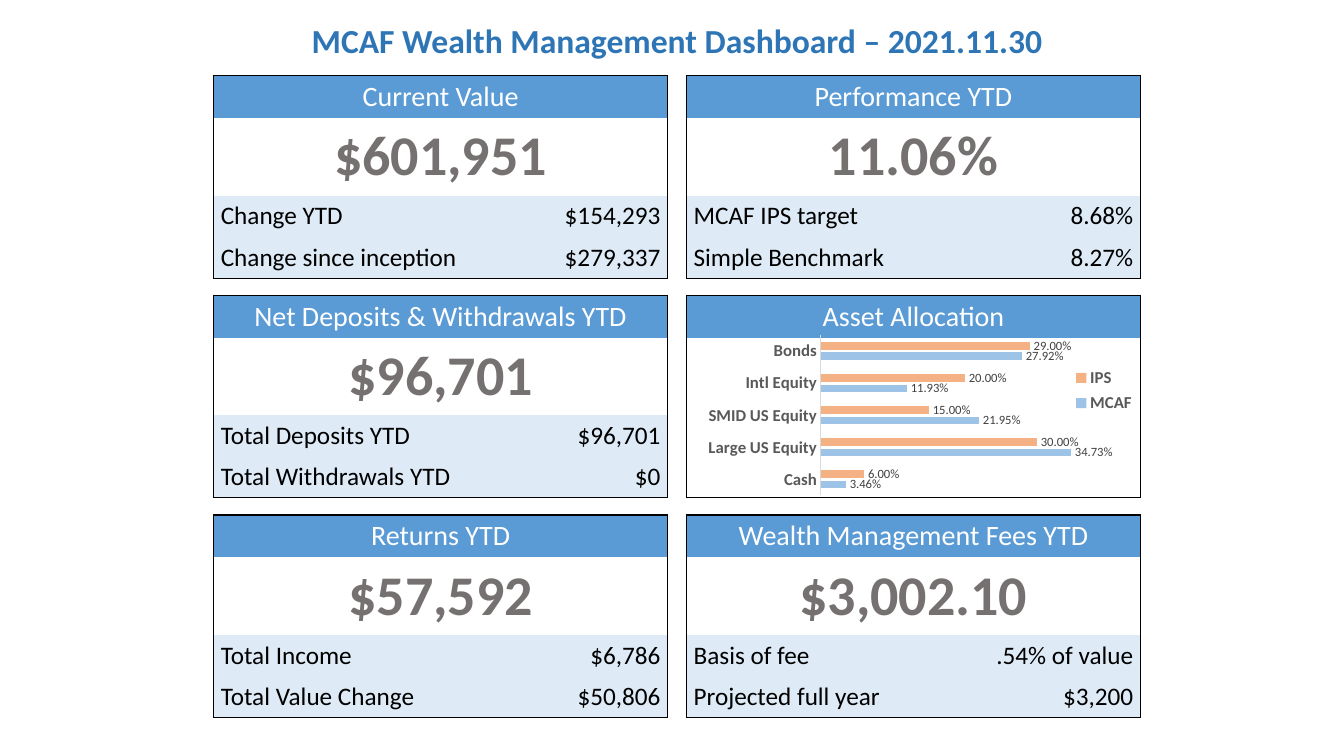
from dataclasses import dataclass

from lxml.etree import SubElement
from pptx import Presentation
from pptx.chart.data import CategoryChartData
from pptx.dml.color import RGBColor
from pptx.enum.chart import XL_CHART_TYPE, XL_LABEL_POSITION, XL_LEGEND_POSITION, XL_TICK_MARK
from pptx.enum.text import MSO_ANCHOR, PP_ALIGN
from pptx.oxml import parse_xml
from pptx.oxml.ns import nsdecls, qn
from pptx.util import Inches, Pt


@dataclass(frozen=True)
class Theme:
    font: str = "Calibri"
    title: str = "2E75B6"
    header: str = "5B9BD5"
    detail: str = "DEEBF7"
    figure: str = "767171"
    white: str = "FFFFFF"
    black: str = "000000"
    axis_text: str = "595959"
    axis_line: str = "D9D9D9"
    label: str = "404040"
    mcaf: str = "9DC3E6"
    ips: str = "F4B183"
    title_size: int = 24
    header_size: int = 20
    figure_size: int = 40
    detail_size: int = 18
    axis_size: int = 12
    label_size: int = 9


theme = Theme()


def style_font(font, size, color, bold=False):
    font.name = theme.font
    font.size = Pt(size)
    font.color.rgb = RGBColor.from_string(color)
    font.bold = bold


def style_cell(cell, sides, fill):
    """Draw the outer borders on the given sides, then set fill and insets."""
    tcPr = cell._tc.get_or_add_tcPr()
    for side in "LRTB":
        if side in sides:
            tcPr.append(parse_xml(
                f'<a:ln{side} {nsdecls("a")} w="12700"><a:solidFill>'
                f'<a:srgbClr val="{theme.black}"/></a:solidFill></a:ln{side}>'))
    if fill:
        cell.fill.solid()
        cell.fill.fore_color.rgb = RGBColor.from_string(fill)
    else:
        cell.fill.background()
    cell.vertical_anchor = MSO_ANCHOR.MIDDLE
    cell.margin_left = cell.margin_right = Inches(0.07)
    cell.margin_top = cell.margin_bottom = Inches(0.04)


prs = Presentation()
prs.slide_width, prs.slide_height = Inches(13.33), Inches(7.5)
s = prs.slides.add_slide(prs.slide_layouts[5])

# Title
title = s.shapes.title
title.left, title.top = Inches(2.12), Inches(0.19)
title.width, title.height = Inches(9.19), Inches(0.46)
tf = title.text_frame
tf.text = "MCAF Wealth Management Dashboard – 2021.11.30"
tf.vertical_anchor = MSO_ANCHOR.MIDDLE
p = tf.paragraphs[0]
p.alignment = PP_ALIGN.CENTER
p.line_spacing = 0.9
style_font(p.runs[0].font, theme.title_size, theme.title, True)

# Cards: two columns, three rows; a card without a figure holds the chart
LEFT, TOP, STEP_X, STEP_Y = 2.12, 0.75, 4.69, 2.18
COL_WIDTHS = (2.97, 1.53)
ROW_HEIGHTS = (0.41, 0.77, 0.41, 0.41)
cards = [
    ("Current Value", "$601,951",
     [("Change YTD", "$154,293"), ("Change since inception", "$279,337")]),
    ("Performance YTD", "11.06%",
     [("MCAF IPS target", "8.68%"), ("Simple Benchmark", "8.27%")]),
    ("Net Deposits & Withdrawals YTD", "$96,701",
     [("Total Deposits YTD", "$96,701"), ("Total Withdrawals YTD", "$0")]),
    ("Asset Allocation", "", [("", ""), ("", "")]),
    ("Returns YTD", "$57,592",
     [("Total Income", "$6,786"), ("Total Value Change", "$50,806")]),
    ("Wealth Management Fees YTD", "$3,002.10",
     [("Basis of fee", ".54% of value"), ("Projected full year", "$3,200")]),
]

for i, (heading, figure, details) in enumerate(cards):
    row, col = divmod(i, 2)
    frame = s.shapes.add_table(4, 2, Inches(LEFT + col * STEP_X), Inches(TOP + row * STEP_Y),
                               Inches(sum(COL_WIDTHS)), Inches(sum(ROW_HEIGHTS)))
    table = frame.table
    table.first_row = table.horz_banding = False
    # Plain table style without grid
    table._tbl.tblPr.find(qn("a:tableStyleId")).text = "{2D5ABB26-0587-4C30-8999-92F81FD0307C}"
    for c, width in enumerate(COL_WIDTHS):
        table.columns[c].width = Inches(width)
    detail_fill = theme.detail if figure else None
    row_styles = [
        (theme.header, theme.header_size, theme.white, False),
        (None, theme.figure_size, theme.figure, True),
        (detail_fill, theme.detail_size, theme.black, False),
        (detail_fill, theme.detail_size, theme.black, False),
    ]
    texts = [(heading, ""), (figure, ""), *details]
    for r, (fill, size, color, bold) in enumerate(row_styles):
        table.rows[r].height = Inches(ROW_HEIGHTS[r])
        spans = r < 2
        if spans:
            table.cell(r, 0).merge(table.cell(r, 1))
        for c in range(2):
            cell = table.cell(r, c)
            sides = "LR" if spans else "LR"[c]
            sides += {0: "T", 3: "B"}.get(r, "")
            style_cell(cell, sides, fill)
            if texts[r][c]:
                cell.text_frame.text = texts[r][c]
                p = cell.text_frame.paragraphs[0]
                p.alignment = PP_ALIGN.CENTER if spans else (PP_ALIGN.LEFT, PP_ALIGN.RIGHT)[c]
                style_font(p.runs[0].font, size, color, bold)

# Asset allocation chart
data = CategoryChartData(number_format="0.00%")
data.categories = ["Cash", "Large US Equity", "SMID US Equity", "Intl Equity", "Bonds"]
data.add_series("MCAF", (0.0346, 0.3473, 0.2195, 0.1193, 0.2792))
data.add_series("IPS", (0.06, 0.3, 0.15, 0.2, 0.29))
chart = s.shapes.add_chart(XL_CHART_TYPE.BAR_CLUSTERED, Inches(LEFT + STEP_X), Inches(3.32),
                           Inches(4.5), Inches(1.6), data).chart
chart.has_title = False
style_font(chart.font, 10, theme.black)

plot = chart.plots[0]
plot.gap_width, plot.overlap = 182, -33
plot.vary_by_categories = False
for series, color in zip(plot.series, (theme.mcaf, theme.ips)):
    series.format.fill.solid()
    series.format.fill.fore_color.rgb = RGBColor.from_string(color)
    labels = series.data_labels
    labels.show_value = True
    labels.number_format = "0.00%"
    labels.number_format_is_linked = False
    labels.position = XL_LABEL_POSITION.OUTSIDE_END
    style_font(labels.font, theme.label_size, theme.label)

axis = chart.category_axis
axis.major_tick_mark = axis.minor_tick_mark = XL_TICK_MARK.NONE
axis.has_major_gridlines = False
axis.format.line.color.rgb = RGBColor.from_string(theme.axis_line)
axis.format.line.width = Pt(0.75)
style_font(axis.tick_labels.font, theme.axis_size, theme.axis_text, True)
chart.value_axis.minimum_scale, chart.value_axis.maximum_scale = 0, 0.4
chart.value_axis.has_major_gridlines = False
chart.value_axis.visible = False

chart.has_legend = True
legend = chart.legend
legend.position = XL_LEGEND_POSITION.RIGHT
legend.include_in_layout = False
style_font(legend.font, theme.axis_size, theme.axis_text, True)

# Fixed places for the plot area and the legend, as shares of the chart
plot_area = chart._chartSpace.chart.plotArea
for old in plot_area.findall(qn("c:layout")):
    plot_area.remove(old)
for parent, index, target, box in (
        (plot_area, 0, "inner", (0.296, 0, 0.635, 1)),
        (legend._element, 1, None, (0.85, 0.17, 0.14, 0.35))):
    for old in parent.findall(qn("c:layout")):
        parent.remove(old)
    layout = parse_xml(f'<c:layout {nsdecls("c")}><c:manualLayout/></c:layout>')
    manual = layout[0]
    settings = [("layoutTarget", target)] if target else []
    settings += [("xMode", "edge"), ("yMode", "edge"), *zip("xywh", box)]
    for tag, value in settings:
        SubElement(manual, qn(f"c:{tag}")).set("val", str(value))
    parent.insert(index, layout)

prs.save("out.pptx")
